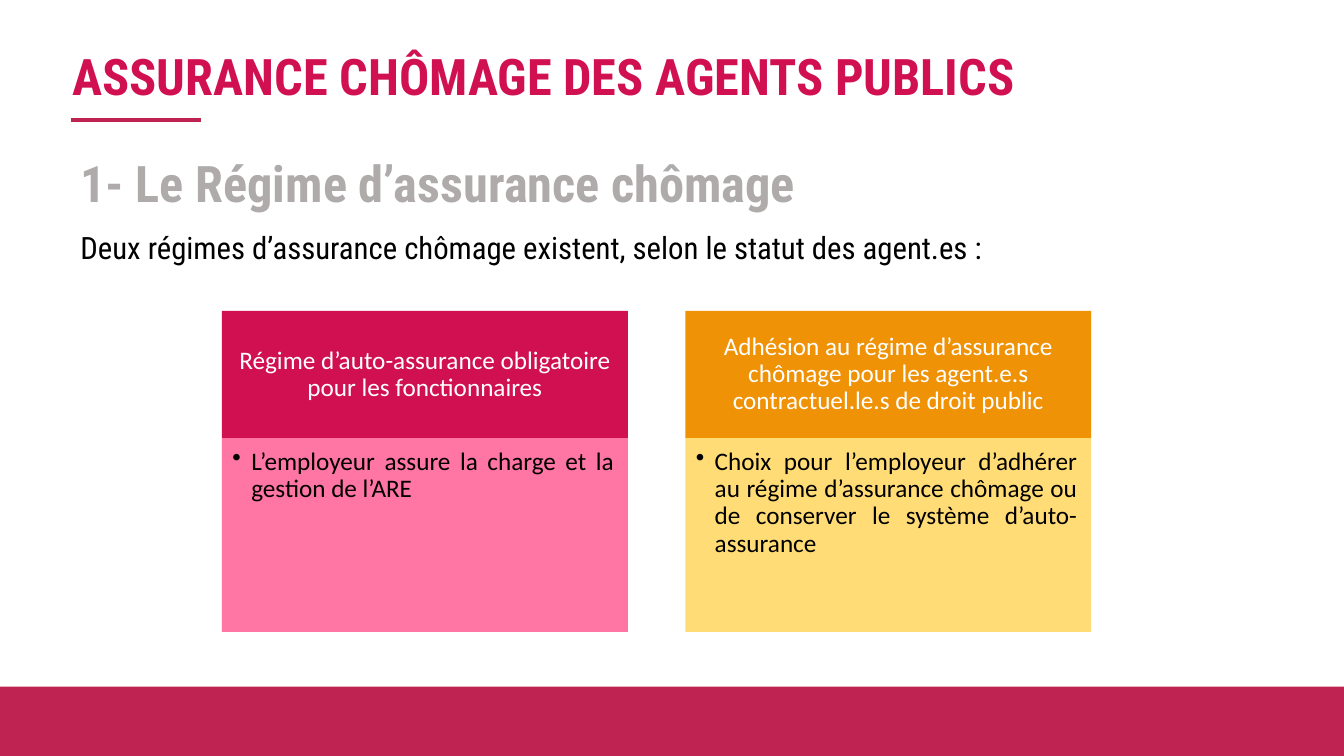
from dataclasses import dataclass

from lxml import etree
from pptx import Presentation
from pptx.dml.color import RGBColor
from pptx.enum import shapes, text
from pptx.oxml import ns
from pptx.util import Pt


@dataclass(frozen=True)
class Theme:
    head: str = "Roboto Condensed"
    body: str = "Calibri"
    big: int = 36
    mid: int = 22
    small: int = 18
    band: str = "BE2352"
    pink: str = "D01050"
    rose: str = "FF6699"
    gold: str = "EF9205"
    sand: str = "FFD966"
    grey: str = "AFABAB"
    black: str = "000000"
    white: str = "FFFFFF"


THEME = Theme()
ALIGN = text.PP_ALIGN


def style(frame, words, face, size, color, bold=False, align=ALIGN.LEFT,
          gap=0.9, after=0, pads=(7.2, 3.6, 7.2, 3.6), anchor=text.MSO_ANCHOR.TOP):
    """Write one paragraph into a frame; pads run left, top, right, bottom."""
    frame.word_wrap = True
    frame.auto_size = text.MSO_AUTO_SIZE.NONE
    frame.vertical_anchor = anchor
    sides = ("left", "top", "right", "bottom")
    for side, pad in zip(sides, pads):
        setattr(frame, f"margin_{side}", Pt(pad))
    frame.text = words
    para = frame.paragraphs[0]
    para.alignment, para.line_spacing = align, gap
    para.space_before, para.space_after = Pt(0), Pt(after)
    font = para.runs[0].font
    font.name, font.size, font.bold = face, Pt(size), bold
    font.color.rgb = RGBColor.from_string(color)
    return para


def block(slide, box, color, alpha=None):
    rect = slide.shapes.add_shape(shapes.MSO_SHAPE.RECTANGLE, *map(Pt, box))
    rect.shadow.inherit = False
    rect.fill.solid()
    rect.fill.fore_color.rgb = RGBColor.from_string(color)
    rect.line.fill.background()
    if alpha:
        tint = rect.fill._xPr.find(".//" + ns.qn("a:srgbClr"))
        etree.SubElement(tint, ns.qn("a:alpha"), val=str(alpha * 1000))
    return rect


def header(slide, box):
    x, y, w, h = box
    title = slide.shapes.title
    title.left, title.top, title.width, title.height = map(Pt, box)
    style(title.text_frame, "ASSURANCE CHÔMAGE DES AGENTS PUBLICS",
          THEME.head, THEME.big, THEME.pink, bold=True)
    left, base = x + 5.8, y + 52
    rule = slide.shapes.add_connector(
        shapes.MSO_CONNECTOR.STRAIGHT, Pt(left), Pt(base), Pt(left + 93), Pt(base))
    rule.line.color.rgb = RGBColor.from_string(THEME.band)
    rule.line.width = Pt(3)
    etree.SubElement(rule.line._get_or_add_ln().getparent(), ns.qn("a:effectLst"))


def intro(slide, box):
    x, y, w, h = box
    lead = slide.shapes.add_textbox(Pt(x), Pt(y), Pt(w), Pt(48))
    style(lead.text_frame, "1- Le Régime d’assurance chômage",
          THEME.head, THEME.big, THEME.grey, bold=True)
    note = slide.shapes.add_textbox(Pt(x), Pt(y + 47.5), Pt(w), Pt(h - 47.5))
    style(note.text_frame,
          "Deux régimes d’assurance chômage existent, selon le statut des agent.es\u00a0:",
          THEME.head, THEME.mid, THEME.black, align=ALIGN.JUSTIFY, gap=1.07, after=8)


def card(slide, box, name, point, dark, light):
    """Place a heading block above a tinted block with one bullet."""
    x, y, w, h = box
    top = 91
    cap = block(slide, (x, y, w, top), dark)
    style(cap.text_frame, name, THEME.body, THEME.small, THEME.white,
          align=ALIGN.CENTER, pads=(10, 5.8, 10, 5.8), anchor=text.MSO_ANCHOR.MIDDLE)
    base = block(slide, (x, y + top, w, h - top), light, alpha=90)
    para = style(base.text_frame, point, THEME.body, THEME.small, THEME.black,
                 align=ALIGN.JUSTIFY, pads=(7.5, 7.5, 10, 11.3))
    props = para._p.get_or_add_pPr()
    props.set("marL", str(Pt(13.5)))
    props.set("indent", str(-Pt(13.5)))
    etree.SubElement(props, ns.qn("a:buChar"), char="•")


def cards(slide, box):
    x, y, w, h = box
    wide = 290
    items = (
        ("Régime d’auto-assurance obligatoire pour les fonctionnaires",
         "L’employeur assure la charge et la gestion de l’ARE",
         THEME.pink, THEME.rose),
        ("Adhésion au régime d’assurance chômage pour les agent.e.s "
         "contractuel.le.s de droit public",
         "Choix pour l’employeur d’adhérer au régime d’assurance chômage ou "
         "de conserver le système d’auto-assurance",
         THEME.gold, THEME.sand),
    )
    step = (w - wide) / (len(items) - 1)
    for i, item in enumerate(items):
        card(slide, (x + i * step, y, wide, h), *item)


def main():
    deck = Presentation()
    deck.slide_width, deck.slide_height = Pt(960), Pt(540)
    slide = deck.slides.add_slide(deck.slide_layouts[5])
    block(slide, (0, 490.5, 960, 49.5), THEME.band)
    header(slide, (44.6, 33.8, 843, 59))
    intro(slide, (50.4, 110.2, 837, 98.5))
    cards(slide, (158.5, 222, 621, 229.3))
    deck.save("out.pptx")


if __name__ == "__main__":
    main()
